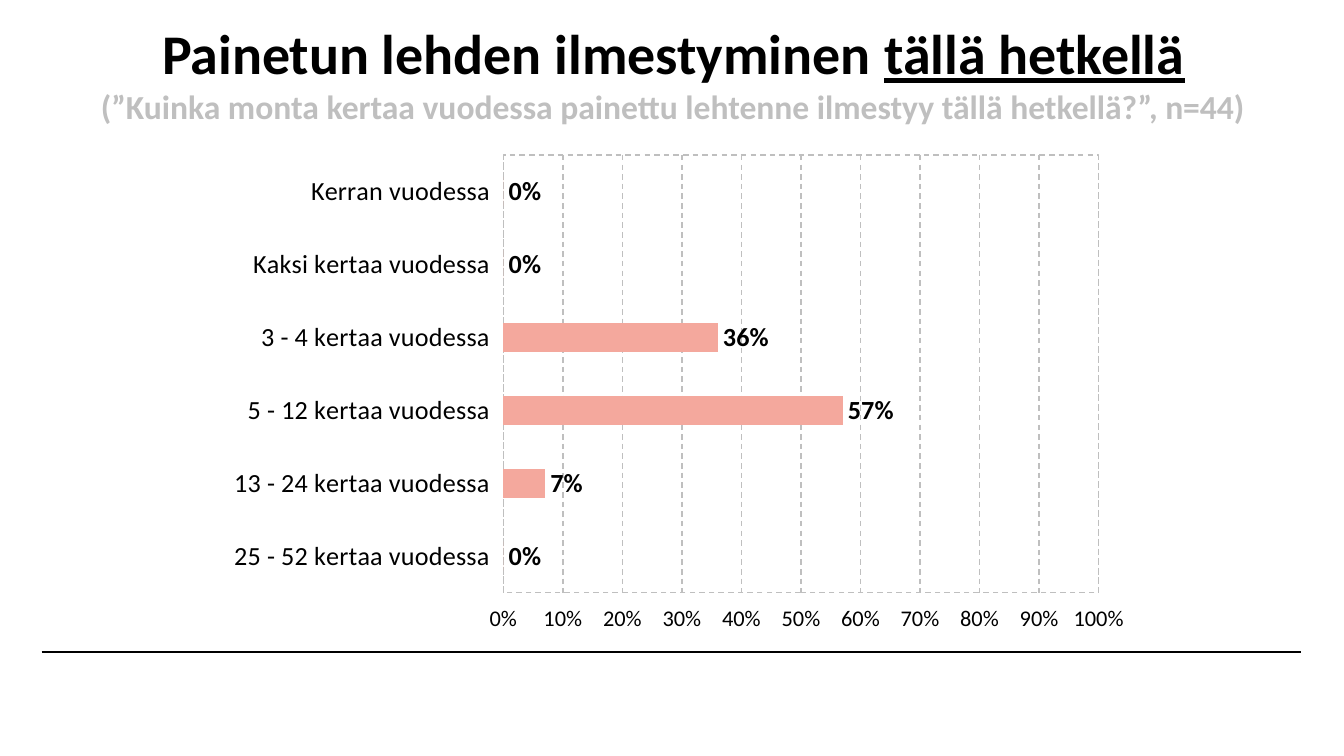
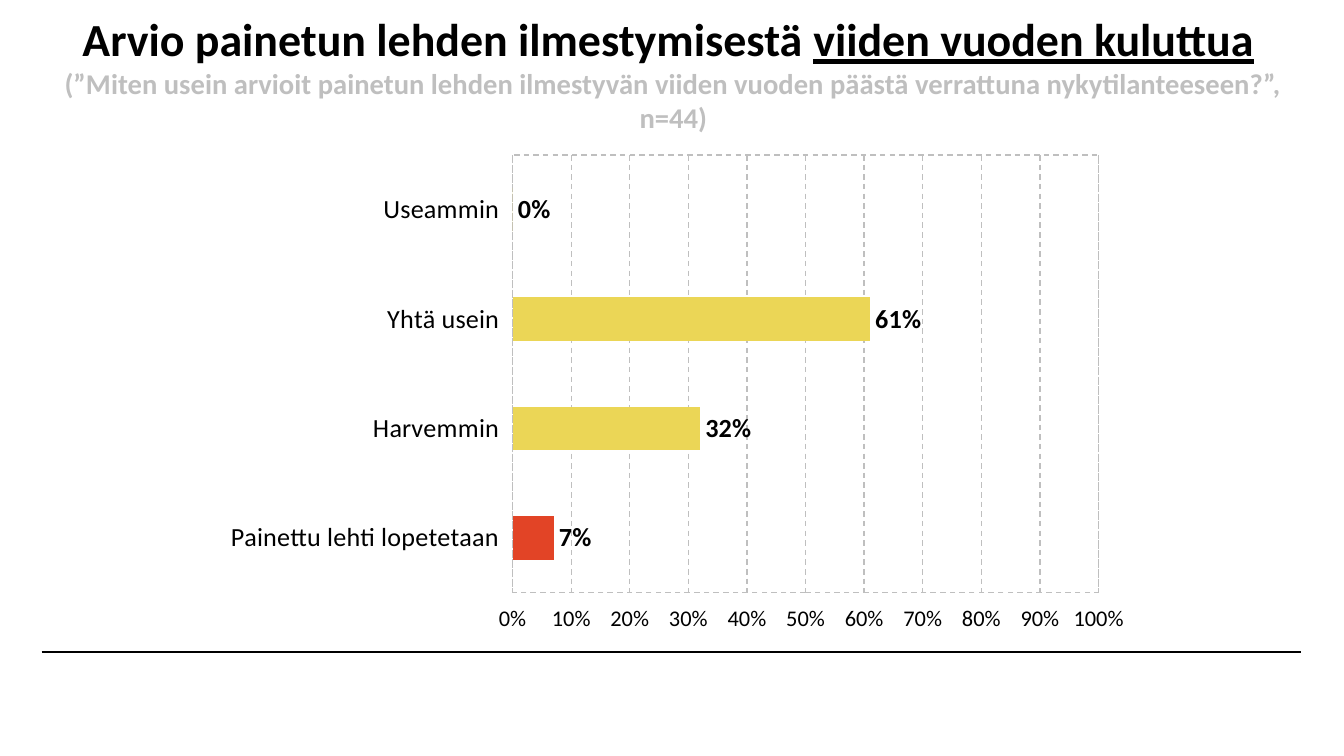
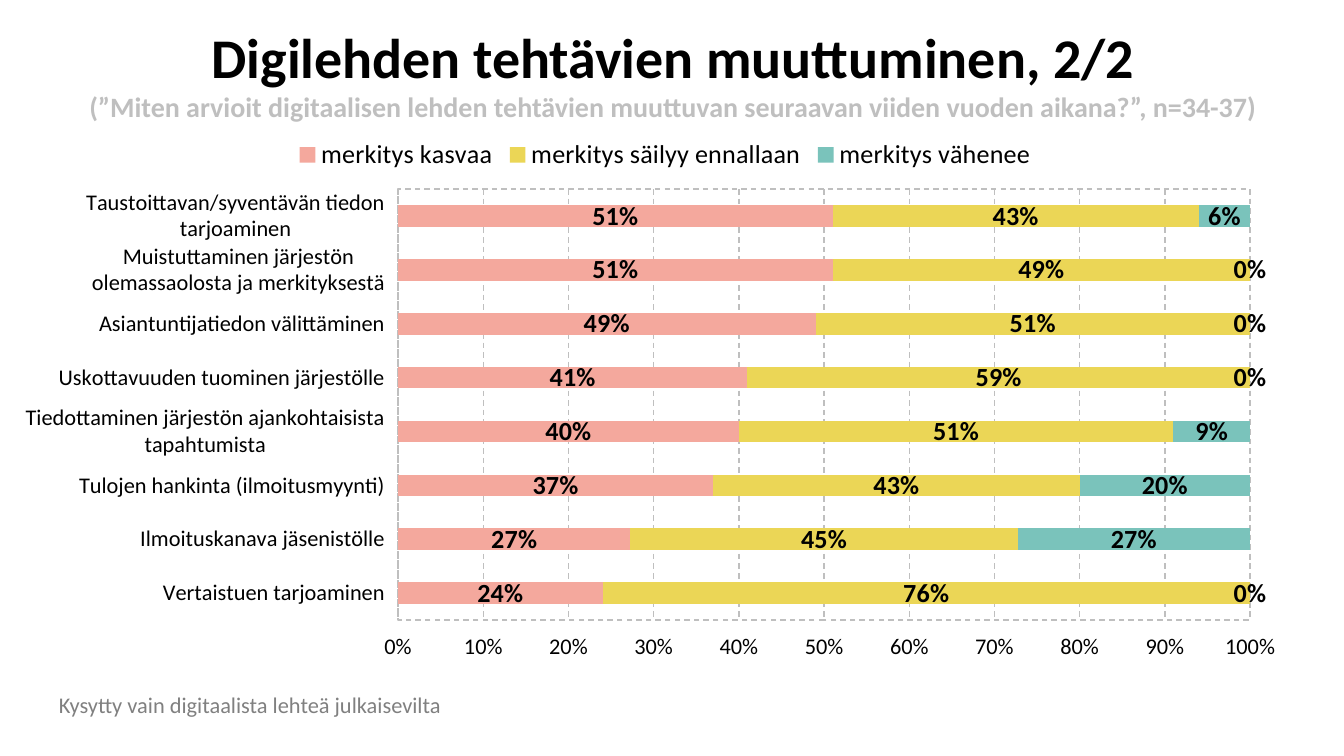
from lxml.etree import SubElement
from pptx import Presentation
from pptx.chart.data import CategoryChartData
from pptx.dml.color import RGBColor
from pptx.enum.chart import (XL_CHART_TYPE as Kind, XL_LABEL_POSITION as LabelAt,
                             XL_LEGEND_POSITION as LegendAt, XL_TICK_LABEL_POSITION as TickLabels,
                             XL_TICK_MARK as Tick)
from pptx.enum.dml import MSO_LINE as Dash
from pptx.enum.shapes import MSO_CONNECTOR as Connector
from pptx.enum.text import MSO_ANCHOR as Anchor, MSO_AUTO_SIZE as Fit, PP_ALIGN as Align
from pptx.oxml import parse_xml
from pptx.oxml.ns import nsdecls, qn
from pptx.util import Inches, Pt

FONT = "Calibri"
BLACK, WHITE, PALE, GREY = "000000", "FFFFFF", "BFBFBF", "808080"
PINK, YELLOW, TEAL, RED = "F4A89D", "EBD656", "7AC3BB", "E24426"
WIDTH = 10
HEIGHT = WIDTH * 9 / 16
TITLE_BOX = (0.34, 0, 9.34, 1.08)
BAR_BOX = (1.6, 1.08, 6.92, 3.7)
RULE = (0.31, 4.85, 9.68, 4.85)

# Categories run from the bottom row to the top; plot = shares of the chart's box
SLIDES = [
    dict(
        heading="Painetun lehden ilmestyminen ", stressed="tällä hetkellä",
        question="(”Kuinka monta kertaa vuodessa painettu lehtenne ilmestyy tällä hetkellä?”, n=44)",
        sizes=(30, 18), box=BAR_BOX, plot=(0.31, 0.02, 0.64, 0.88), row_size=14,
        rows=[("25 - 52 kertaa vuodessa", 0), ("13 - 24 kertaa vuodessa", 0.07),
              ("5 - 12 kertaa vuodessa", 0.57), ("3 - 4 kertaa vuodessa", 0.36),
              ("Kaksi kertaa vuodessa", 0), ("Kerran vuodessa", 0)],
        series=[("Series 1", PINK)]),
    dict(
        heading="Arvio painetun lehden ilmestymisestä ", stressed="viiden vuoden kuluttua", tail=" ",
        question="(”Miten usein arvioit painetun lehden ilmestyvän viiden vuoden päästä "
                 "verrattuna nykytilanteeseen?”, n=44)",
        sizes=(24.6, 15.3), box=BAR_BOX, plot=(0.32, 0.02, 0.63, 0.88), row_size=14,
        rows=[("Painettu lehti lopetetaan", 0.07), ("Harvemmin", 0.32),
              ("Yhtä usein", 0.61), ("Useammin", 0)],
        series=[("Series 1", YELLOW)], highlights={0: RED}),
    dict(
        heading="Digilehden tehtävien muuttuminen, 2/2",
        question="(”Miten arvioit digitaalisen lehden tehtävien muuttuvan seuraavan "
                 "viiden vuoden aikana?”, n=34-37)",
        sizes=(30, 15), box=(0.19, 0.92, 9.49, 4.06), plot=(0.29, 0.12, 0.67, 0.79), row_size=12,
        rows=[("Vertaistuen tarjoaminen", 0.24, 0.76, 0),
              ("Ilmoituskanava jäsenistölle", 0.27, 0.45, 0.27),
              ("Tulojen hankinta (ilmoitusmyynti)", 0.37, 0.43, 0.2),
              ("Tiedottaminen järjestön ajankohtaisista tapahtumista", 0.4, 0.51, 0.09),
              ("Uskottavuuden tuominen järjestölle", 0.41, 0.59, 0),
              ("Asiantuntijatiedon välittäminen", 0.49, 0.51, 0),
              ("Muistuttaminen järjestön olemassaolosta ja merkityksestä", 0.51, 0.49, 0),
              ("Taustoittavan/syventävän tiedon tarjoaminen", 0.51, 0.43, 0.06)],
        series=[("merkitys kasvaa", PINK), ("merkitys säilyy ennallaan", YELLOW),
                ("merkitys vähenee", TEAL)],
        note="Kysytty vain digitaalista lehteä julkaisevilta"),
]


def rgb(code):
    return RGBColor.from_string(code)


def inches(lengths):
    return [Inches(length) for length in lengths]


def paint(part, color):
    part.fill.solid()
    part.fill.fore_color.rgb = rgb(color)


def set_font(font, size, color, **more):
    font.color.rgb = rgb(color)
    for name, value in dict(name=FONT, size=Pt(size), **more).items():
        setattr(font, name, value)


def add_run(paragraph, text, size, color, **more):
    run = paragraph.add_run()
    run.text = text
    set_font(run.font, size, color, **more)


def add_title(slide, content):
    title = slide.shapes.title
    for side, length in zip(("left", "top", "width", "height"), inches(TITLE_BOX)):
        setattr(title, side, length)
    paint(title, WHITE)
    tint = title.fill._xPr.find(".//" + qn("a:srgbClr"))
    SubElement(tint, qn("a:alpha"), val="93000")
    frame = title.text_frame
    for name, value in dict(word_wrap=True, auto_size=Fit.NONE, vertical_anchor=Anchor.MIDDLE).items():
        setattr(frame, name, value)
    line = frame.paragraphs[0]
    line.alignment = Align.CENTER
    big, small = content["sizes"]
    for part in ("heading", "stressed", "tail"):
        if part in content:
            add_run(line, content[part], big, BLACK, bold=True, underline=part == "stressed")
    line.add_line_break()
    add_run(line, content["question"], small, PALE, bold=True)
    return title


def frame_plot(chart, shares):
    """Fix the inner plot area and give it a dashed outline."""
    area = chart._chartSpace.chart.plotArea
    for old in area.findall(qn("c:layout")):
        area.remove(old)
    places = "".join(f'<c:{key} val="{share}"/>' for key, share in zip("xywh", shares))
    area.insert(0, parse_xml(
        f'<c:layout {nsdecls("c")}><c:manualLayout><c:layoutTarget val="inner"/>'
        f'<c:xMode val="edge"/><c:yMode val="edge"/>{places}</c:manualLayout></c:layout>'))
    area.append(parse_xml(
        f'<c:spPr {nsdecls("c", "a")}><a:noFill/><a:ln w="9525"><a:solidFill><a:srgbClr val="{PALE}"/>'
        f'</a:solidFill><a:prstDash val="dash"/></a:ln></c:spPr>'))


def add_bars(slide, content):
    rows, series = content["rows"], content["series"]
    stacked = len(series) > 1
    data = CategoryChartData(number_format="0%")
    data.categories = [row[0] for row in rows]
    for column, (name, _) in enumerate(series, 1):
        data.add_series(name, [row[column] for row in rows])
    kind = Kind.BAR_STACKED_100 if stacked else Kind.BAR_CLUSTERED
    chart = slide.shapes.add_chart(kind, *inches(content["box"]), data).chart
    set_font(chart.font, 18, RED)
    chart.has_title = False
    chart.has_legend = stacked
    if stacked:
        chart.legend.position = LegendAt.TOP
        chart.legend.include_in_layout = False
        set_font(chart.legend.font, 14, BLACK)

    # Bars and their labels
    plot = chart.plots[0]
    plot.vary_by_categories = False
    plot.gap_width = 150
    if stacked:
        plot.overlap = 100
    for bars, (_, color) in zip(plot.series, series):
        paint(bars.format, color)
        bars.invert_if_negative = False
        for index, special in content.get("highlights", {}).items():
            paint(bars.points[index].format, special)
        labels = bars.data_labels
        set_font(labels.font, 14, BLACK, bold=True)
        for name, value in dict(show_value=True, number_format="0%", number_format_is_linked=False,
                                position=LabelAt.CENTER if stacked else LabelAt.OUTSIDE_END).items():
            setattr(labels, name, value)

    # Axes and grid
    names, scale = chart.category_axis, chart.value_axis
    for axis, size, tick in ((names, content["row_size"], Tick.NONE), (scale, 12, Tick.OUTSIDE)):
        set_font(axis.tick_labels.font, size, BLACK)
        axis.major_tick_mark, axis.minor_tick_mark = tick, Tick.NONE
        axis.format.line.fill.background()
    names.tick_label_position = TickLabels.LOW
    scale.major_unit = 0.1
    if not stacked:
        scale.maximum_scale = 1
    scale.tick_labels.number_format = "0%"
    scale.tick_labels.number_format_is_linked = False
    scale.has_major_gridlines = True
    grid = scale.major_gridlines.format.line
    grid.color.rgb, grid.width, grid.dash_style = rgb(PALE), Pt(0.75), Dash.DASH
    frame_plot(chart, content["plot"])


def add_rule(slide):
    rule = slide.shapes.add_connector(Connector.STRAIGHT, *inches(RULE))
    rule.line.color.rgb, rule.line.width = rgb(BLACK), Pt(0.75)
    SubElement(rule._element.spPr, qn("a:effectLst"))


def add_note(slide, text):
    frame = slide.shapes.add_textbox(*inches((0.34, 5.09, 5.9, 0.3))).text_frame
    frame.word_wrap, frame.auto_size = True, Fit.SHAPE_TO_FIT_TEXT
    add_run(frame.paragraphs[0], text, 12, GREY)


def main():
    deck = Presentation()
    deck.slide_width, deck.slide_height = inches((WIDTH, HEIGHT))
    for content in SLIDES:
        slide = deck.slides.add_slide(deck.slide_layouts[5])
        title = add_title(slide, content)
        if "note" not in content:
            add_rule(slide)
        add_bars(slide, content)
        if "note" in content:
            # The title band lies over the top edge of the tall chart
            slide.shapes._spTree.append(title._element)
            add_note(slide, content["note"])
    deck.save("out.pptx")


if __name__ == "__main__":
    main()
